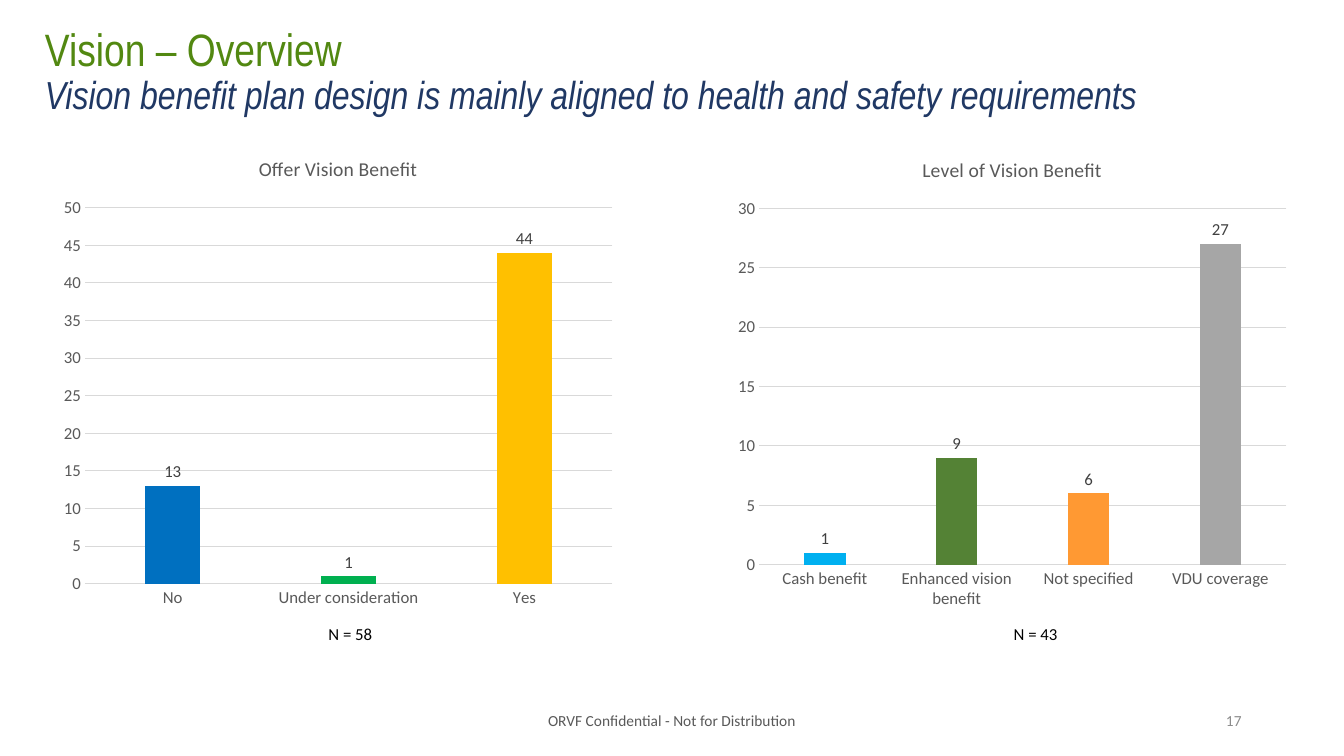
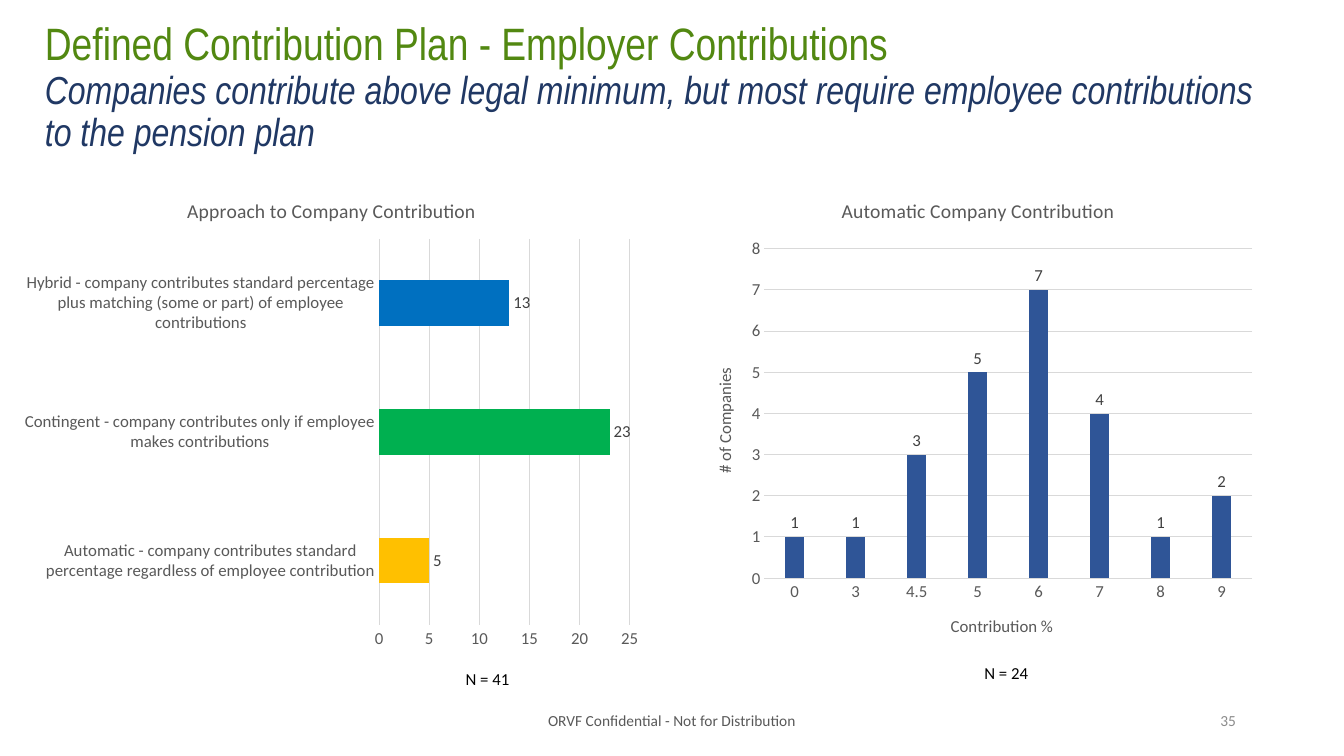
"""Build two benefit survey slides, each with a pair of bar charts."""
import pptx
import pptx.chart.data
import pptx.dml.color
import pptx.enum.chart
import pptx.enum.text
import pptx.util

Pt = pptx.util.Pt
RGBColor = pptx.dml.color.RGBColor
ALIGN = pptx.enum.text.PP_ALIGN
ANCHOR = pptx.enum.text.MSO_ANCHOR
KIND = pptx.enum.chart.XL_CHART_TYPE
TICK = pptx.enum.chart.XL_TICK_MARK
LABEL = pptx.enum.chart.XL_LABEL_POSITION

GREEN = RGBColor(0x52, 0x88, 0x11)
NAVY = RGBColor(0x20, 0x38, 0x64)
BLACK = RGBColor(0x00, 0x00, 0x00)
CHARCOAL = RGBColor(0x40, 0x40, 0x40)
GREY = RGBColor(0x59, 0x59, 0x59)
PALE_GREY = RGBColor(0x8C, 0x8C, 0x8C)
RULE = RGBColor(0xD9, 0xD9, 0xD9)
BAR_BLUE = RGBColor(0x00, 0x70, 0xC0)
BAR_GREEN = RGBColor(0x00, 0xB0, 0x50)
BAR_GOLD = RGBColor(0xFF, 0xC0, 0x00)
BAR_SKY = RGBColor(0x00, 0xB0, 0xF0)
BAR_OLIVE = RGBColor(0x54, 0x82, 0x35)
BAR_ORANGE = RGBColor(0xFF, 0x99, 0x33)
BAR_GREY = RGBColor(0xA6, 0xA6, 0xA6)
BAR_NAVY = RGBColor(0x2F, 0x55, 0x97)

HEADING = {"name": "Arial Narrow", "size": Pt(32.4)}
SUBHEADING = {"name": "Arial Narrow", "size": Pt(27.9), "italic": True}
FOOTER = {"name": "Calibri", "size": Pt(11)}
BODY = {"name": "Calibri", "size": Pt(12), "bold": False}
CHART_TITLE = {"name": "Calibri", "size": Pt(14), "bold": False}
AXIS = {"major_tick_mark": TICK.NONE, "minor_tick_mark": TICK.NONE}
LABELS = {"show_value": True, "position": LABEL.OUTSIDE_END}

FOOTER_TEXT = "ORVF Confidential - Not for Distribution"


def set_values(obj, values):
    """Set each attribute named in a dict of format values."""
    for name, value in values.items():
        setattr(obj, name, value)


def set_font(font, values, color):
    """Apply font values and a colour."""
    set_values(font, values)
    font.color.rgb = color


def add_run(p, text, values, color):
    """Add one formatted run to a paragraph."""
    r = p.add_run()
    r.text = text
    set_font(r.font, values, color)


def add_box(s, box, wrap=True, anchor=ANCHOR.MIDDLE, align=ALIGN.LEFT):
    """Add a text box and return its first paragraph."""
    tf = s.shapes.add_textbox(*map(Pt, box)).text_frame
    set_values(tf, {"word_wrap": wrap, "vertical_anchor": anchor})
    p = tf.paragraphs[0]
    p.alignment = align
    return p


def add_title(s, box, heading, subheading):
    """Add the heading with its italic message below."""
    p = add_box(s, box)
    p.line_spacing = 0.9
    add_run(p, heading, HEADING, GREEN)
    p.add_line_break()
    add_run(p, subheading, SUBHEADING, NAVY)


def add_footer(s, number, left):
    """Add the confidentiality line and the slide number."""
    p = add_box(s, (318, 500, 324, 29), align=ALIGN.CENTER)
    add_run(p, FOOTER_TEXT, FOOTER, GREY)
    p = add_box(s, (left, 500, 216, 29), align=ALIGN.RIGHT)
    add_run(p, number, FOOTER, PALE_GREY)


def add_sample_size(s, left, top, count):
    """Add the sample size below a chart."""
    p = add_box(s, (left, top, 48, 22), wrap=False, anchor=ANCHOR.TOP)
    add_run(p, f"N = {count}", BODY, BLACK)


def set_title(owner, text, values):
    """Give a chart or an axis a title."""
    owner.has_title = True
    tf = (owner.chart_title if hasattr(owner, "chart_title") else owner.axis_title).text_frame
    add_run(tf.paragraphs[0], text, values, GREY)


def add_bars(s, box, title, bars, top, step=5, kind=KIND.COLUMN_CLUSTERED,
             gap=219, overlap=-27, axis_titles=None):
    """Add a bar chart from rows of category, value and colour."""
    data = pptx.chart.data.CategoryChartData()
    data.categories = [name for name, _, _ in bars]
    data.add_series("Series 1", [value for _, value, _ in bars])
    chart = s.shapes.add_chart(kind, *map(Pt, box), data).chart
    chart.has_legend = False
    set_font(chart.font, BODY, BLACK)
    set_title(chart, title, CHART_TITLE)

    plot = chart.plots[0]
    set_values(plot, {"vary_by_categories": False, "gap_width": gap,
                      "overlap": overlap, "has_data_labels": True})
    set_values(plot.data_labels, LABELS)
    set_font(plot.data_labels.font, BODY, CHARCOAL)
    for i, (_, _, color) in enumerate(bars):
        fill = plot.series[0].points[i].format.fill
        fill.solid()
        fill.fore_color.rgb = color

    cat, val = chart.category_axis, chart.value_axis
    for axis in (cat, val):
        set_values(axis, AXIS)
        set_font(axis.tick_labels.font, BODY, GREY)
    cat.has_major_gridlines = False
    set_values(val, {"minimum_scale": 0, "maximum_scale": top,
                     "major_unit": step, "has_major_gridlines": True})
    val.format.line.fill.background()
    for line in (cat.format.line, val.major_gridlines.format.line):
        line.width = Pt(0.75)
        line.color.rgb = RULE
    for axis, text in zip((cat, val), axis_titles or ()):
        set_title(axis, text, BODY)


def vision_slide(prs):
    """Build the vision benefit slide."""
    s = prs.slides.add_slide(prs.slide_layouts[6])
    add_title(s, (25, 0, 828, 104), "Vision – Overview",
              "Vision benefit plan design is mainly aligned to health and safety requirements")
    add_footer(s, "17", 678)
    add_bars(s, (37.5, 98, 408, 343), "Offer Vision Benefit", [
        ("No", 13, BAR_BLUE),
        ("Under consideration", 1, BAR_GREEN),
        ("Yes", 44, BAR_GOLD),
    ], top=50)
    add_bars(s, (519, 98.6, 408, 343), "Level of Vision Benefit", [
        ("Cash benefit", 1, BAR_SKY),
        ("Enhanced vision benefit", 9, BAR_OLIVE),
        ("Not specified", 6, BAR_ORANGE),
        ("VDU coverage", 27, BAR_GREY),
    ], top=30)
    add_sample_size(s, 227.5, 442, 58)
    add_sample_size(s, 717, 442, 43)


def contribution_slide(prs):
    """Build the employer contribution slide."""
    s = prs.slides.add_slide(prs.slide_layouts[6])
    add_title(s, (25, 11, 899, 104), "Defined Contribution Plan - Employer Contributions",
              "Companies contribute above legal minimum, but most require employee "
              "contributions to the pension plan")
    add_footer(s, "35", 674)
    rates = {"0": 1, "3": 1, "4.5": 3, "5": 5, "6": 7, "7": 4, "8": 1, "9": 2}
    add_bars(s, (494.6, 127.4, 408, 343), "Automatic Company Contribution",
             [(rate, count, BAR_NAVY) for rate, count in rates.items()],
             top=8, step=1, overlap=0, axis_titles=("Contribution %", "# of Companies"))
    add_bars(s, (8.6, 127.4, 456.5, 343), "Approach to Company Contribution", [
        ("Automatic - company contributes standard percentage regardless of "
         "employee contribution", 5, BAR_GOLD),
        ("Contingent - company contributes only if employee makes contributions",
         23, BAR_GREEN),
        ("Hybrid - company contributes standard percentage plus matching "
         "(some or part) of employee contributions", 13, BAR_BLUE),
    ], top=25, kind=KIND.BAR_CLUSTERED, gap=182, overlap=0)
    add_sample_size(s, 325.5, 474.5, 41)
    add_sample_size(s, 696, 470, 24)


def main():
    """Build and save the presentation."""
    prs = pptx.Presentation()
    set_values(prs, {"slide_width": Pt(960), "slide_height": Pt(540)})
    vision_slide(prs)
    contribution_slide(prs)
    prs.save("out.pptx")


if __name__ == "__main__":
    main()
